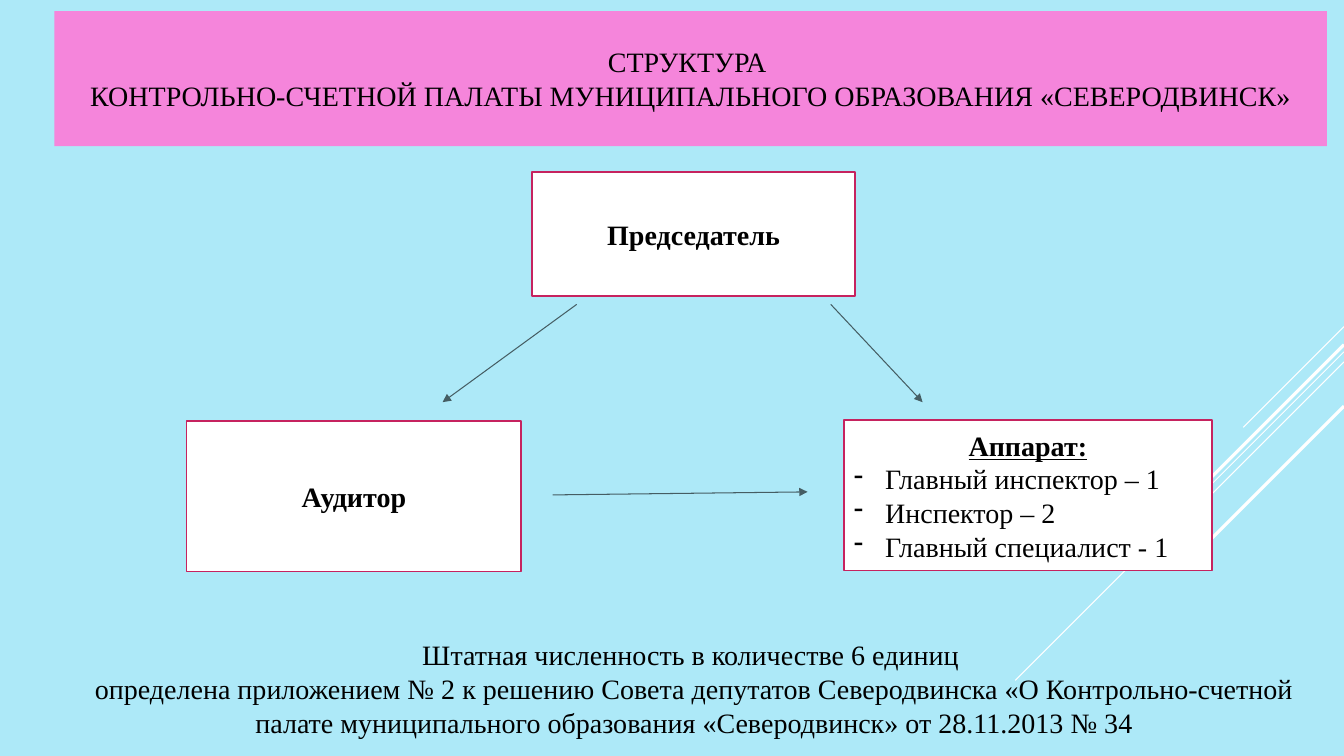
from lxml import etree
from pptx import Presentation
from pptx.dml.color import RGBColor
from pptx.enum.shapes import MSO_CONNECTOR, MSO_SHAPE
from pptx.enum.text import MSO_ANCHOR, PP_ALIGN
from pptx.oxml.ns import qn
from pptx.util import Inches, Pt

RECT, LINE = MSO_SHAPE.RECTANGLE, MSO_CONNECTOR.STRAIGHT
CENTER, LEFT = PP_ALIGN.CENTER, PP_ALIGN.LEFT
MIDDLE, TOP = MSO_ANCHOR.MIDDLE, MSO_ANCHOR.TOP

SKY = RGBColor(0xAD, 0xE9, 0xF8)
PINK = RGBColor(0xF5, 0x85, 0xDB)
CRIMSON = RGBColor(0xC6, 0x23, 0x5F)
WHITE = RGBColor(255, 255, 255)
BLACK = RGBColor(0, 0, 0)

# Content: each text is a list of (words, style)
PLAIN = {"bold": False}
BOLD = {"bold": True}
HEAD = {"bold": True, "underline": True}
ITEM = {"bold": False, "bullet": True}

TITLE = [("СТРУКТУРА \vКОНТРОЛЬНО-СЧЕТНОЙ ПАЛАТЫ МУНИЦИПАЛЬНОГО "
          "ОБРАЗОВАНИЯ «СЕВЕРОДВИНСК»", PLAIN)]
STAFF = [("Аппарат:", HEAD), ("Главный инспектор – 1", ITEM),
         ("Инспектор – 2", ITEM), ("Главный специалист - 1", ITEM)]
NOTE = [("Штатная численность в количестве 6 единиц ", PLAIN),
        ("определена приложением № 2 к решению Совета депутатов "
         "Северодвинска «О Контрольно-счетной палате муниципального "
         "образования «Северодвинск» от 28.11.2013 № 34", PLAIN)]

# (place, fill, border, text)
BOXES = [
    ((0.54, 0.11, 12.62, 1.34), PINK, None, TITLE),
    ((5.28, 1.71, 3.2, 1.23), WHITE, CRIMSON, [("Председатель", BOLD)]),
    ((1.85, 4.18, 3.32, 1.49), WHITE, CRIMSON, [("Аудитор", BOLD)]),
    ((8.37, 4.17, 3.65, 1.49), WHITE, CRIMSON, STAFF),
]
NOTE_AT = (0.65, 6.28, 12.47, 1.11)
ARROWS = [((5.72, 3.02), (4.39, 3.99)), ((8.24, 3.02), (9.15, 3.99)),
          ((5.48, 4.91), (8.01, 4.88))]
# Diagonals at 45° from the right edge: (start height, run, weight)
RAYS = [(3.24, 1, 0.75), (3.49, 3.26, 0.75), (3.59, 2.07, 0.75),
        (3.42, 1.91, 2.25), (4.03, 1.39, 2.25)]
WIDE, HIGH = 13.33, 7.5


def write(frame, text, anchor):
    frame.word_wrap = True
    frame.vertical_anchor = anchor
    for i, (words, style) in enumerate(text):
        para = frame.add_paragraph() if i else frame.paragraphs[0]
        para.text = words
        para.alignment = LEFT if style.get("bullet") else CENTER
        if style.get("bullet"):
            props = para._p.get_or_add_pPr()
            props.set("marL", str(Inches(0.31)))
            props.set("indent", str(-Inches(0.31)))
            etree.SubElement(props, qn("a:buChar"), char="-")
        look = {"name": "Times New Roman", "size": Pt(20),
                "bold": style["bold"], "underline": style.get("underline")}
        for run in para.runs:
            for key, value in look.items():
                setattr(run.font, key, value)
            run.font.color.rgb = BLACK


def draw(start, end, color, weight):
    line = slide.shapes.add_connector(LINE, *map(Inches, start + end))
    line.line.color.rgb = color
    line.line.width = Pt(weight)
    etree.SubElement(line._element.spPr, qn("a:effectLst"))
    return line


deck = Presentation()
deck.slide_width, deck.slide_height = Inches(WIDE), Inches(HIGH)
slide = deck.slides.add_slide(deck.slide_layouts[6])
slide.background.fill.solid()
slide.background.fill.fore_color.rgb = SKY

# Corner rays
for y, run, weight in RAYS:
    draw((WIDE, y), (WIDE - run, y + run), WHITE, weight)

# Title band and boxes
for place, fill, border, text in BOXES:
    box = slide.shapes.add_shape(RECT, *map(Inches, place))
    box.shadow.inherit = False
    box.fill.solid()
    box.fill.fore_color.rgb = fill
    if border:
        box.line.color.rgb = border
        box.line.width = Pt(1.25)
    else:
        box.line.fill.background()
    write(box.text_frame, text, MIDDLE)

# Arrows, 60% opaque
for start, end in ARROWS:
    stroke = draw(start, end, BLACK, 0.75).line._get_or_add_ln()
    tone = stroke.find(".//" + qn("a:srgbClr"))
    etree.SubElement(tone, qn("a:alpha"), val="60000")
    etree.SubElement(stroke, qn("a:tailEnd"), type="triangle")

# Staffing note
note = slide.shapes.add_textbox(*map(Inches, NOTE_AT))
write(note.text_frame, NOTE, TOP)

deck.save("out.pptx")
